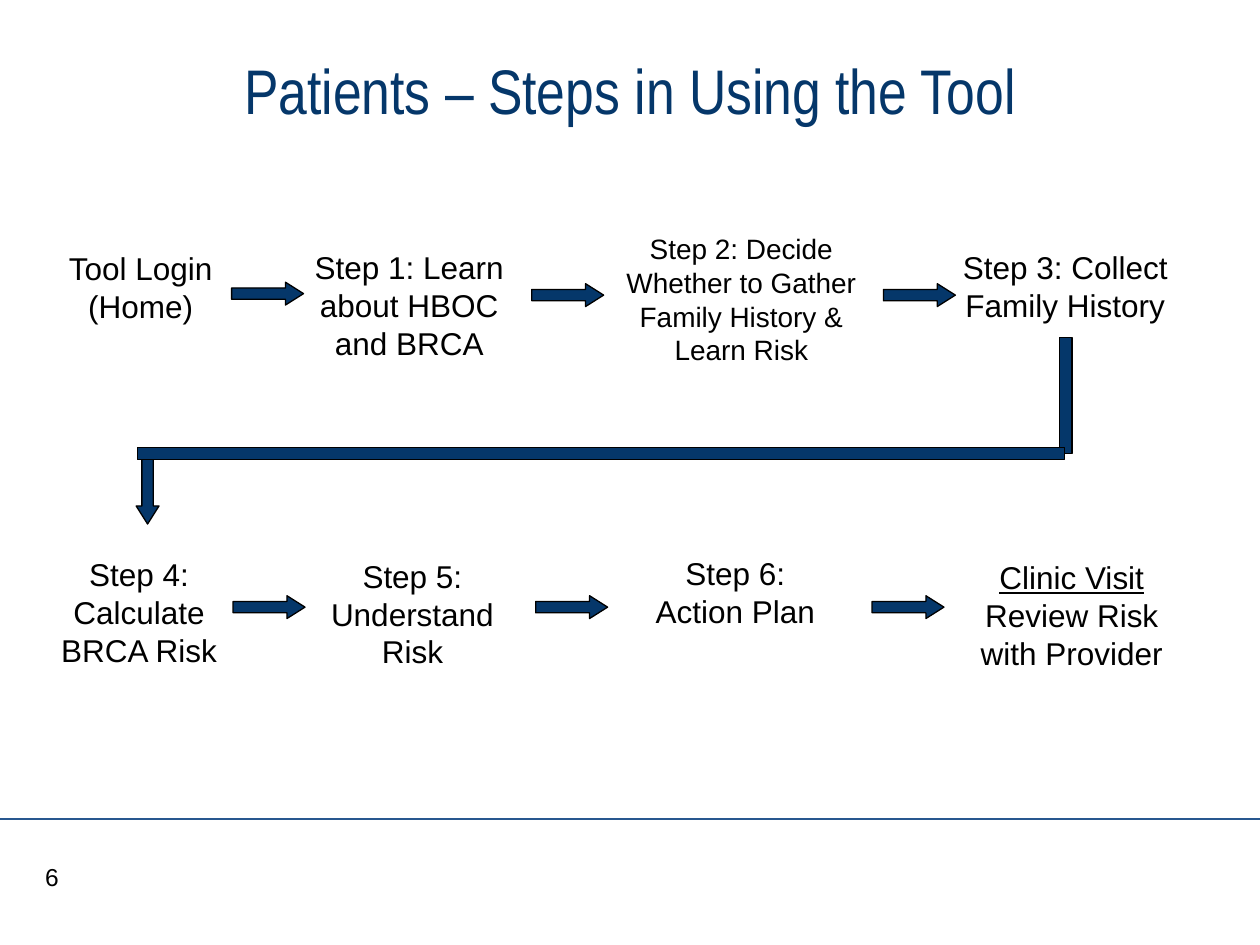
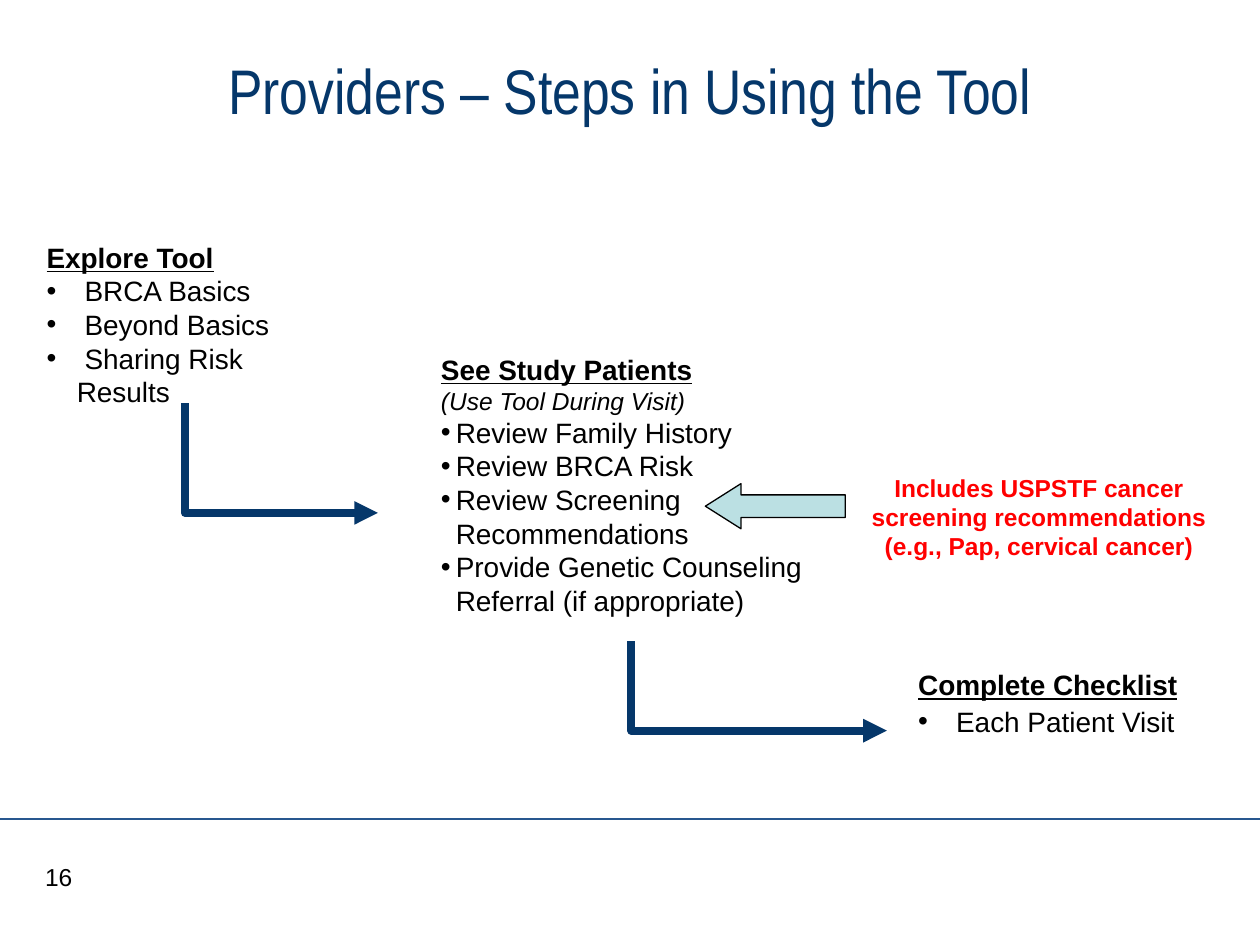
"""Build two slides on the steps patients and providers take in using the tool."""
from dataclasses import dataclass

import pptx
import pptx.dml.color
import pptx.enum.shapes
import pptx.enum.text
import pptx.oxml
import pptx.oxml.ns
import pptx.util
from pptx.util import Cm

NAVY, RULE, BLACK, RED, PALE = "05376A", "28578F", "000000", "FF0000", "BBE0E3"
SHAPE = pptx.enum.shapes.MSO_SHAPE
ALIGN = pptx.enum.text.PP_ALIGN
ANCHOR = pptx.enum.text.MSO_ANCHOR
WIDE_HANG, TIGHT_HANG = 0.61, 0.3
ARROW_SIZE = (1.45, 0.46)


@dataclass(frozen=True)
class Run:
    text: str
    size: float = 18
    bold: bool = False
    italic: bool = False
    underline: bool = False
    color: str = BLACK
    font: str = "Arial"
    line_break: bool = False


@dataclass(frozen=True)
class Para:
    runs: tuple[Run, ...]
    align: ALIGN = ALIGN.LEFT
    hang: float = 0
    bullet: bool = False
    before: float = 0


@dataclass(frozen=True)
class Box:
    left: float
    top: float
    width: float
    height: float
    paras: tuple[Para, ...]
    anchor: ANCHOR = ANCHOR.TOP


@dataclass(frozen=True)
class Block:
    left: float
    top: float
    width: float
    height: float
    kind: SHAPE = SHAPE.RIGHT_ARROW
    fill: str = NAVY
    rotation: float = 0


@dataclass(frozen=True)
class Elbow:
    x1: float
    y1: float
    x2: float
    y2: float


def rgb(color: str) -> pptx.dml.color.RGBColor:
    return pptx.dml.color.RGBColor.from_string(color)


def element(xml: str):
    tag, _, rest = xml.partition(" ")
    return pptx.oxml.parse_xml(f"<a:{tag} {pptx.oxml.ns.nsdecls('a')} {rest}/>")


def centred(*runs: Run) -> tuple[Para, ...]:
    return (Para(runs, ALIGN.CENTER),)


def heading(text: str, hang: float = 0) -> Para:
    return Para((Run(text, 16, bold=True, underline=True),), hang=hang)


def bullet(text: str, hang: float, before: float = 0) -> Para:
    return Para((Run(text, 16),), hang=hang, bullet=True, before=before)


def draw_box(s, box: Box) -> None:
    sp = s.shapes.add_textbox(Cm(box.left), Cm(box.top), Cm(box.width), Cm(box.height))
    tf = sp.text_frame
    tf.word_wrap = True
    tf.vertical_anchor = box.anchor
    for i, para in enumerate(box.paras):
        p = tf.add_paragraph() if i else tf.paragraphs[0]
        p.alignment = para.align
        if para.before:
            p.space_before = pptx.util.Pt(para.before)
        pPr = p._p.get_or_add_pPr()
        if para.hang:
            pPr.set("marL", str(Cm(para.hang)))
            pPr.set("indent", str(-Cm(para.hang)))
        if para.bullet:
            pPr.append(element('buFont typeface="Arial"'))
            pPr.append(element('buChar char="•"'))
        for run in para.runs:
            r = p.add_run()
            r.text = run.text
            f = r.font
            f.name, f.size = run.font, pptx.util.Pt(run.size)
            f.bold, f.italic, f.underline = run.bold, run.italic, run.underline
            f.color.rgb = rgb(run.color)
            if run.line_break:
                p.add_line_break()


def draw_block(s, block: Block) -> None:
    sp = s.shapes.add_shape(block.kind, Cm(block.left), Cm(block.top),
                            Cm(block.width), Cm(block.height))
    sp.shadow.inherit = False
    sp.rotation = block.rotation
    if block.kind != SHAPE.RECTANGLE:
        sp.adjustments[1] = 0.79
    sp.fill.solid()
    sp.fill.fore_color.rgb = rgb(block.fill)
    sp.line.color.rgb = rgb(BLACK)
    sp.line.width = pptx.util.Pt(0.75)


def draw_line(s, kind, x1: float, y1: float, x2: float, y2: float, color: str, width: float):
    sp = s.shapes.add_connector(kind, Cm(x1), Cm(y1), Cm(x2), Cm(y2))
    sp.line.color.rgb = rgb(color)
    sp.line.width = pptx.util.Pt(width)
    sp._element.spPr.append(element("effectLst"))
    return sp


def draw_elbow(s, elbow: Elbow) -> None:
    mid_x, mid_y = (elbow.x1 + elbow.x2) / 2, (elbow.y1 + elbow.y2) / 2
    half_w, half_h = (elbow.y2 - elbow.y1) / 2, (elbow.x2 - elbow.x1) / 2
    sp = draw_line(s, pptx.enum.shapes.MSO_CONNECTOR.ELBOW, mid_x + half_w, mid_y - half_h,
                   mid_x - half_w, mid_y + half_h, NAVY, 4.5)
    spPr = sp._element.spPr
    spPr.find(pptx.oxml.ns.qn("a:xfrm")).set("rot", "16200000")
    spPr.find(pptx.oxml.ns.qn("a:prstGeom")).set("prst", "bentConnector2")
    sp.line._get_or_add_ln().append(element('tailEnd type="triangle"'))


def add_slide(prs, title: str, number: str):
    s = prs.slides.add_slide(prs.slide_layouts[6])
    draw_line(s, pptx.enum.shapes.MSO_CONNECTOR.STRAIGHT, 0, 16.51, 25.4, 16.51, RULE, 1.5)
    draw_box(s, Box(1.9, 0.64, 21.6, 2.34,
                    centred(Run(title, 36, color=NAVY, font="Arial Narrow")), ANCHOR.MIDDLE))
    draw_box(s, Box(0.66, 17.25, 1.9, 0.84, (Para((Run(number, 14),)),)))
    return s


def patients_slide(prs) -> None:
    s = add_slide(prs, "Patients – Steps in Using the Tool", "6")
    steps = (
        Box(0.79, 4.9, 4.09, 1.91, centred(Run("Tool Login", line_break=True), Run("(Home)"))),
        Box(5.99, 4.88, 4.52, 3.63, centred(Run("Step 1: Learn about HBOC and BRCA"))),
        Box(12.19, 4.55, 5.51, 2.97,
            centred(Run("Step 2: Decide Whether to Gather Family History & Learn Risk", 16))),
        Box(19.05, 4.88, 4.85, 2.49, centred(Run("Step 3: Collect Family History"))),
        Box(0.38, 11.07, 4.85, 2.54, centred(Run("Step 4: Calculate BRCA Risk"))),
        Box(6.27, 11.1, 4.09, 2.54, centred(Run("Step 5: Understand Risk"))),
        Box(12.78, 11.05, 4.09, 1.78, centred(Run("Step 6: Action Plan"))),
        Box(19.18, 11.13, 4.85, 2.54, centred(Run("Clinic Visit", underline=True),
                                             Run(" Review Risk with Provider"))),
    )
    for step in steps:
        draw_box(s, step)
    arrow_spots = ((4.67, 5.69), (10.72, 5.72), (17.81, 5.72),
                   (4.7, 12.01), (10.8, 12.01), (17.58, 12.01))
    for left, top in arrow_spots:
        draw_block(s, Block(left, top, *ARROW_SIZE))
    return_path = (
        Block(2.29, 9.65, 1.37, 0.46, rotation=90),
        Block(21.36, 6.81, 0.25, 2.34, SHAPE.RECTANGLE),
        Block(2.77, 9.02, 18.69, 0.25, SHAPE.RECTANGLE),
    )
    for block in return_path:
        draw_block(s, block)


def providers_slide(prs) -> None:
    s = add_slide(prs, "Providers – Steps in Using the Tool", "16")
    explore = (" BRCA Basics", " Beyond Basics", " Sharing Risk Results")
    visit = ("Review Family History", "Review BRCA Risk", "Review Screening Recommendations",
             "Provide Genetic Counseling Referral (if appropriate)")
    note = "Includes USPSTF cancer screening recommendations (e.g., Pap, cervical cancer)"
    boxes = (
        Box(0.69, 4.72, 6.17, 2.97,
            (heading("Explore Tool"), *(bullet(t, WIDE_HANG) for t in explore))),
        Box(8.64, 6.98, 8.25, 5.59,
            (heading("See Study Patients", TIGHT_HANG),
             Para((Run("(Use Tool During Visit)", 14, italic=True),), hang=TIGHT_HANG),
             *(bullet(t, TIGHT_HANG) for t in visit))),
        Box(18.26, 13.34, 5.92, 1.68,
            (heading("Complete Checklist"), bullet(" Each Patient Visit", WIDE_HANG, 1.6))),
        Box(17.2, 9.4, 7.49, 2.03, centred(Run(note, 14, bold=True, color=RED))),
    )
    for box in boxes:
        draw_box(s, box)
    for elbow in (Elbow(3.73, 8.13, 7.62, 10.34), Elbow(12.73, 12.93, 17.88, 14.73)):
        draw_elbow(s, elbow)
    draw_block(s, Block(14.22, 9.75, 2.82, 0.91, SHAPE.LEFT_ARROW, PALE))


def main() -> None:
    prs = pptx.Presentation()
    prs.slide_width, prs.slide_height = Cm(25.4), Cm(19.05)
    patients_slide(prs)
    providers_slide(prs)
    prs.save("out.pptx")


if __name__ == "__main__":
    main()
